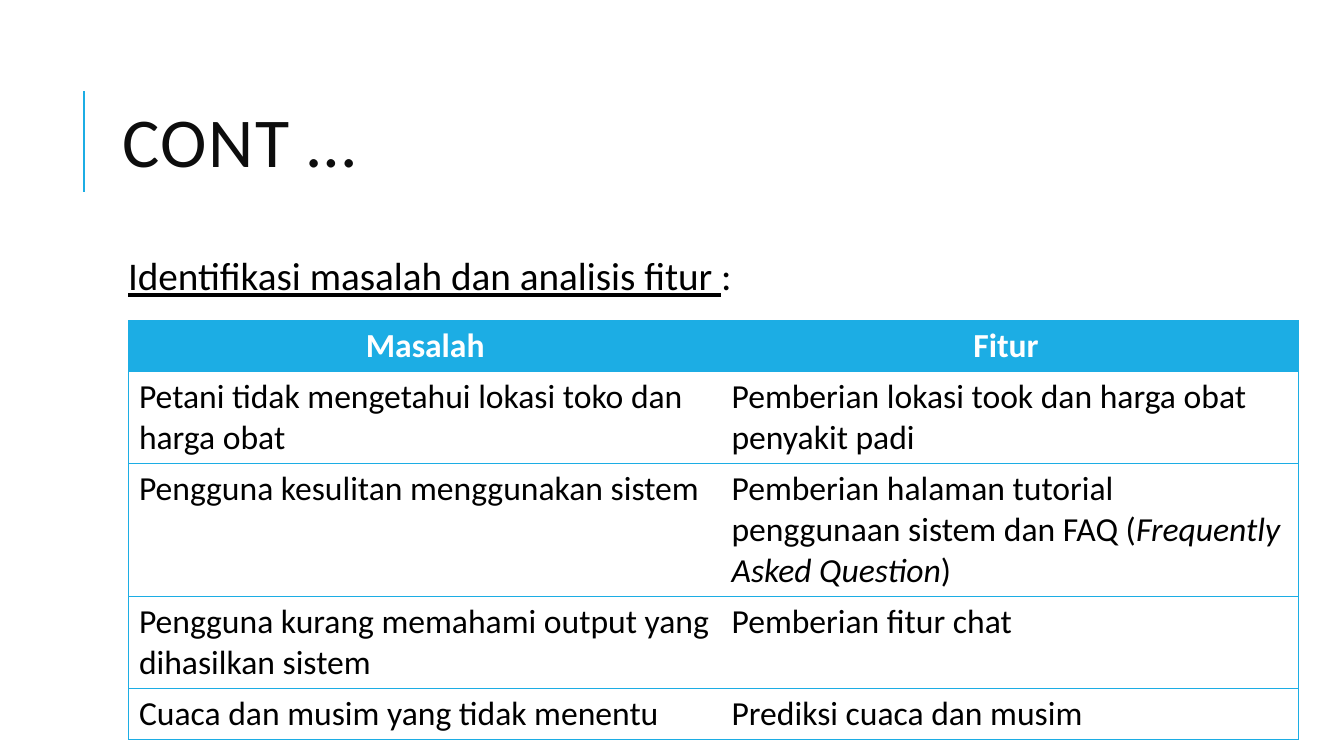
from dataclasses import dataclass

from lxml import etree
from pptx import Presentation
from pptx.dml.color import RGBColor
from pptx.enum.shapes import MSO_CONNECTOR
from pptx.enum.text import MSO_ANCHOR, PP_ALIGN
from pptx.oxml.ns import qn
from pptx.util import Inches, Pt

STRAIGHT = MSO_CONNECTOR.STRAIGHT
TOP, MIDDLE = MSO_ANCHOR.TOP, MSO_ANCHOR.MIDDLE
LEFT, CENTER = PP_ALIGN.LEFT, PP_ALIGN.CENTER

# Grid: 64 columns by 36 rows over the slide
SLIDE_WIDTH, SLIDE_HEIGHT = Inches(13.33), Inches(7.5)
GRID_COLUMNS, GRID_ROWS = 64, 36


@dataclass(frozen=True)
class Theme:
    font: str = "Calibri"
    accent: str = "1CADE4"
    title_color: str = "0D0D0D"
    text_color: str = "000000"
    header_color: str = "FFFFFF"
    title_size: float = 50
    body_size: float = 28
    table_size: float = 24
    rule_width: float = 1.5
    border_width: float = 0.75


@dataclass(frozen=True)
class Run:
    text: str
    italic: bool = False
    underline: bool = False


@dataclass(frozen=True)
class Box:
    left: float
    top: float
    width: float
    height: float


@dataclass(frozen=True)
class Row:
    problem: list[Run]
    feature: list[Run]
    lines: int


THEME = Theme()
TITLE_BOX = Box(5.38, 3.07, 51.02, 7.87)
BODY_BOX = Box(5.38, 12, 57.47, 21.12)
TABLE_LEFT, TABLE_TOP = 6.14, 15.26
TABLE_COLUMNS = (28.22, 27.46)
LINE_HEIGHT, CELL_PADDING = 1.95, 0.48

ROWS = [
    Row([Run("Masalah")], [Run("Fitur ")], 1),
    Row([Run("Petani tidak mengetahui lokasi toko dan harga obat")],
        [Run("Pemberian lokasi took dan harga obat penyakit padi")], 2),
    Row([Run("Pengguna kesulitan menggunakan sistem")],
        [Run("Pemberian halaman tutorial penggunaan sistem dan FAQ ("),
         Run("Frequently Asked Question", italic=True), Run(")")], 3),
    Row([Run("Pengguna kurang memahami output yang dihasilkan sistem")],
        [Run("Pemberian fitur chat")], 2),
    Row([Run("Cuaca dan musim yang tidak menentu")],
        [Run("Prediksi cuaca dan musim")], 1),
]


def across(columns: float) -> int:
    return round(SLIDE_WIDTH * columns / GRID_COLUMNS)


def down(rows: float) -> int:
    return round(SLIDE_HEIGHT * rows / GRID_ROWS)


def write_text(frame, runs: list[Run], *, size: float, color: str,
               bold: bool = False, align=LEFT, line_spacing: float = 1.0,
               before: float = 0, after: float = 0, tracking: float = 0) -> None:
    paragraph = frame.paragraphs[0]
    paragraph.alignment = align
    paragraph.line_spacing = line_spacing
    paragraph.space_before, paragraph.space_after = Pt(before), Pt(after)
    for item in runs:
        run = paragraph.add_run()
        run.text = item.text
        font = run.font
        font.name, font.size, font.bold = THEME.font, Pt(size), bold
        font.italic, font.underline = item.italic, item.underline
        font.color.rgb = RGBColor.from_string(color)
        if tracking:
            font._element.set("spc", str(round(tracking * 100)))


def add_text_box(slide, box: Box, anchor, margin_left: float, margin_top: float):
    shape = slide.shapes.add_textbox(across(box.left), down(box.top),
                                     across(box.width), down(box.height))
    frame = shape.text_frame
    frame.word_wrap = True
    frame.vertical_anchor = anchor
    frame.margin_left = Inches(margin_left)
    frame.margin_top = Inches(margin_top)
    return frame


def add_title_rule(slide) -> None:
    connector = slide.shapes.add_connector(STRAIGHT, across(4), down(9.12),
                                           across(4), down(4.32))
    connector.line.color.rgb = RGBColor.from_string(THEME.accent)
    connector.line.width = Pt(THEME.rule_width)
    etree.SubElement(connector._element.spPr, qn("a:effectLst"))


def set_borders(cell, visible_sides: str) -> None:
    properties = cell._tc.get_or_add_tcPr()
    for position, side in enumerate("LRTB"):
        line = etree.Element(qn(f"a:ln{side}"), w=str(Pt(THEME.border_width)))
        if side in visible_sides:
            fill = etree.SubElement(line, qn("a:solidFill"))
            etree.SubElement(fill, qn("a:srgbClr"), val=THEME.accent)
        else:
            etree.SubElement(line, qn("a:noFill"))
        properties.insert(position, line)


def add_feature_table(slide) -> None:
    heights = [down(LINE_HEIGHT * row.lines + CELL_PADDING) for row in ROWS]
    widths = [across(width) for width in TABLE_COLUMNS]
    table = slide.shapes.add_table(len(ROWS), len(widths), across(TABLE_LEFT),
                                   down(TABLE_TOP), sum(widths), sum(heights)).table
    table.horz_banding = False
    for column, width in zip(table.columns, widths):
        column.width = width
    for row_index, row in enumerate(ROWS):
        table.rows[row_index].height = heights[row_index]
        header = row_index == 0
        for column_index, runs in enumerate((row.problem, row.feature)):
            cell = table.cell(row_index, column_index)
            if header:
                cell.fill.solid()
                cell.fill.fore_color.rgb = RGBColor.from_string(THEME.accent)
            else:
                cell.fill.background()
            set_borders(cell, "LTB" if column_index == 0 else "RTB")
            write_text(cell.text_frame, runs, size=THEME.table_size, bold=header,
                       color=THEME.header_color if header else THEME.text_color,
                       align=CENTER if header else LEFT)


def main() -> None:
    presentation = Presentation()
    presentation.slide_width, presentation.slide_height = SLIDE_WIDTH, SLIDE_HEIGHT
    slide = presentation.slides.add_slide(presentation.slide_layouts[6])

    # Title with its vertical rule
    add_title_rule(slide)
    title = add_text_box(slide, TITLE_BOX, MIDDLE, 0.1, 0.05)
    write_text(title, [Run("CONT …")], size=THEME.title_size,
               color=THEME.title_color, line_spacing=0.8, tracking=1)

    # Subheading
    body = add_text_box(slide, BODY_BOX, TOP, 0.15, 0.05)
    write_text(body, [Run("Identifikasi masalah dan analisis fitur ", underline=True),
                      Run(":")],
               size=THEME.body_size, color=THEME.text_color,
               line_spacing=0.9, before=12, after=2)

    # Problems and the features that answer them
    add_feature_table(slide)
    presentation.save("out.pptx")


if __name__ == "__main__":
    main()
